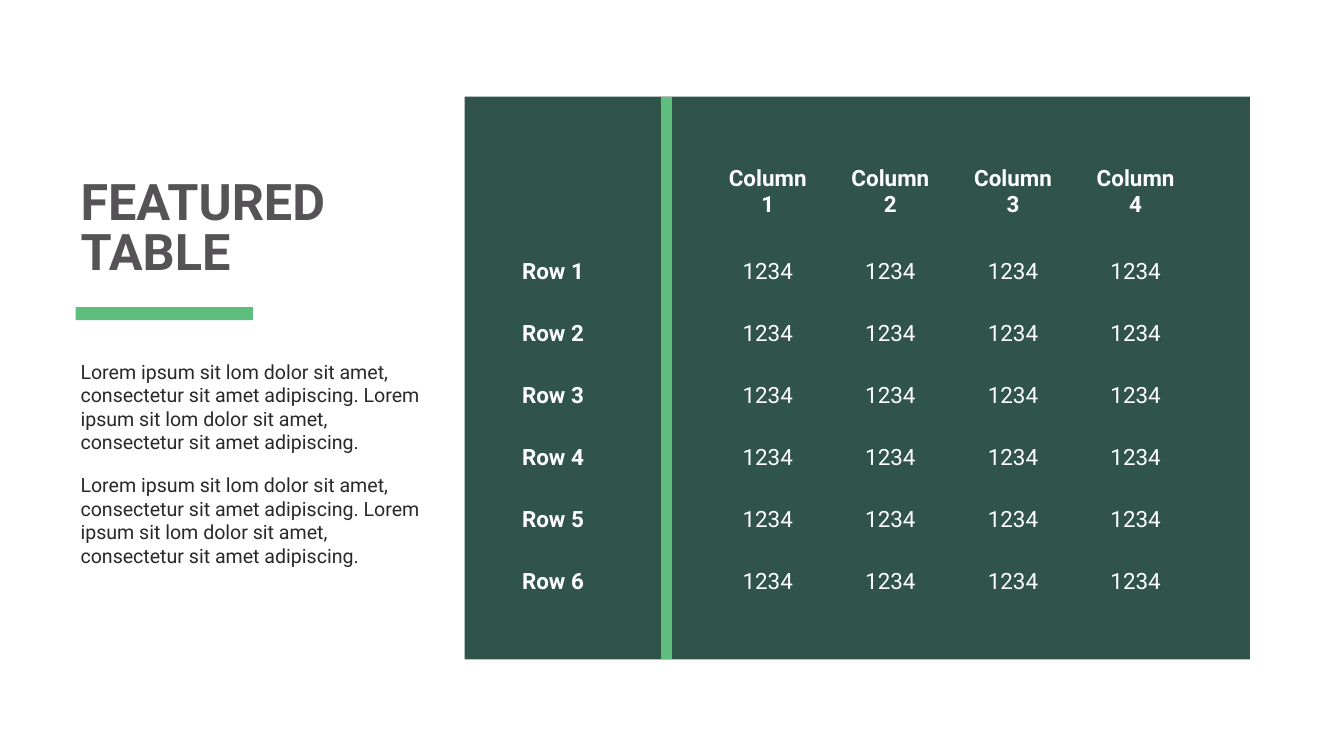
from dataclasses import dataclass

from lxml import etree
from pptx import Presentation
from pptx.dml.color import RGBColor
from pptx.enum.shapes import MSO_CONNECTOR, MSO_SHAPE
from pptx.enum.text import MSO_ANCHOR, MSO_AUTO_SIZE, PP_ALIGN
from pptx.oxml.ns import qn
from pptx.util import Inches, Pt

RECTANGLE = MSO_SHAPE.RECTANGLE
STRAIGHT = MSO_CONNECTOR.STRAIGHT
TOP, MIDDLE, BOTTOM = MSO_ANCHOR.TOP, MSO_ANCHOR.MIDDLE, MSO_ANCHOR.BOTTOM
LEFT, CENTER = PP_ALIGN.LEFT, PP_ALIGN.CENTER
GROW = MSO_AUTO_SIZE.SHAPE_TO_FIT_TEXT
NO_GRID_STYLE = "{2D5ABB26-0587-4C30-8999-92F81FD0307C}"

SLIDE_WIDTH, SLIDE_HEIGHT = Inches(26.67), Inches(15)
GRID_COLUMNS, GRID_ROWS = 160, 90


@dataclass(frozen=True)
class Theme:
    font: str = "Roboto"
    title: str = "555355"
    body: str = "2B282A"
    accent: str = "5EBE7E"
    panel: str = "305449"
    table_text: str = "FFFFFF"
    title_size: int = 72
    body_size: int = 28
    table_size: int = 32
    divider_width: int = 16


THEME = Theme()

TITLE_LINES = ["FEATURED", "TABLE"]
BODY_PARAGRAPHS = [
    "Lorem ipsum sit lom dolor sit amet, consectetur sit amet adipiscing. "
    "Lorem ipsum sit lom dolor sit amet, consectetur sit amet adipiscing."
] * 2
COLUMN_COUNT, ROW_COUNT = 4, 6
CELL_VALUE = "1234"

MARGIN = 9
TEXT_WIDTH = 42.2
PANEL_LEFT, PANEL_TOP, PANEL_WIDTH, PANEL_HEIGHT = 55.3, 11.5, 93.5, 67
TABLE_LEFT, TABLE_TOP = 61.55, 17.1
COLUMN_WIDTHS = [22.55] + [14.6] * COLUMN_COUNT
ROW_HEIGHTS = [11.5] + [7.4] * ROW_COUNT
DIVIDER_X = 79.3


def across(columns):
    return round(SLIDE_WIDTH * columns / GRID_COLUMNS)


def down(rows):
    return round(SLIDE_HEIGHT * rows / GRID_ROWS)


def place(left, top, width, height):
    """Turn a grid area into slide lengths."""
    return across(left), down(top), across(width), down(height)


def add_run(paragraph, text, size, color, bold=False):
    run = paragraph.add_run()
    run.text = text
    run.font.name = THEME.font
    run.font.size = Pt(size)
    run.font.bold = bold
    run.font.color.rgb = RGBColor.from_string(color)


def add_text(slide, area, texts, size, color, bold=False, anchor=TOP,
             line_spacing=None, space_after=None):
    frame = slide.shapes.add_textbox(*place(*area)).text_frame
    frame.word_wrap = True
    frame.auto_size = GROW
    frame.vertical_anchor = anchor
    for index, text in enumerate(texts):
        paragraph = frame.add_paragraph() if index else frame.paragraphs[0]
        paragraph.line_spacing = line_spacing
        paragraph.space_after = space_after
        add_run(paragraph, text, size, color, bold)


def add_block(slide, area, color):
    shape = slide.shapes.add_shape(RECTANGLE, *place(*area))
    shape.shadow.inherit = False
    shape.fill.solid()
    shape.fill.fore_color.rgb = RGBColor.from_string(color)
    shape.line.fill.background()


def add_divider(slide, column, top, bottom):
    divider = slide.shapes.add_connector(
        STRAIGHT, across(column), down(top), across(column), down(bottom))
    divider.line.color.rgb = RGBColor.from_string(THEME.accent)
    divider.line.width = Pt(THEME.divider_width)
    etree.SubElement(divider._element.spPr, qn("a:effectLst"))


def fill_cell(cell, lines, bold=False, alignment=CENTER):
    cell.vertical_anchor = MIDDLE
    paragraph = cell.text_frame.paragraphs[0]
    paragraph.alignment = alignment
    for index, line in enumerate(lines):
        if index:
            paragraph.add_line_break()
        add_run(paragraph, line, THEME.table_size, THEME.table_text, bold)


def add_data_table(slide):
    area = (TABLE_LEFT, TABLE_TOP, sum(COLUMN_WIDTHS), sum(ROW_HEIGHTS))
    table = slide.shapes.add_table(
        ROW_COUNT + 1, COLUMN_COUNT + 1, *place(*area)).table
    table.first_row = table.horz_banding = False
    table._tbl.tblPr.find(qn("a:tableStyleId")).text = NO_GRID_STYLE
    for column, width in zip(table.columns, COLUMN_WIDTHS):
        column.width = across(width)
    for row, height in zip(table.rows, ROW_HEIGHTS):
        row.height = down(height)
    for cell in table.iter_cells():
        cell.fill.background()
    for column in range(1, COLUMN_COUNT + 1):
        fill_cell(table.cell(0, column), ["Column", str(column)], bold=True)
    for row in range(1, ROW_COUNT + 1):
        fill_cell(table.cell(row, 0), [f"Row {row}"], bold=True, alignment=LEFT)
        for column in range(1, COLUMN_COUNT + 1):
            fill_cell(table.cell(row, column), [CELL_VALUE])


def main():
    presentation = Presentation()
    presentation.slide_width = SLIDE_WIDTH
    presentation.slide_height = SLIDE_HEIGHT
    slide = presentation.slides.add_slide(presentation.slide_layouts[6])

    add_text(slide, (MARGIN, 42.5, TEXT_WIDTH, 25.55), BODY_PARAGRAPHS,
             THEME.body_size, THEME.body, space_after=Pt(THEME.body_size))
    add_text(slide, (MARGIN, 20.8, TEXT_WIDTH, 12.9), TITLE_LINES,
             THEME.title_size, THEME.title, bold=True, anchor=BOTTOM,
             line_spacing=Pt(THEME.title_size))
    add_block(slide, (MARGIN, 36.55, 21.1, 1.55), THEME.accent)
    add_block(slide, (PANEL_LEFT, PANEL_TOP, PANEL_WIDTH, PANEL_HEIGHT), THEME.panel)
    add_data_table(slide)
    add_divider(slide, DIVIDER_X, PANEL_TOP, PANEL_TOP + PANEL_HEIGHT)

    presentation.save("out.pptx")


if __name__ == "__main__":
    main()
